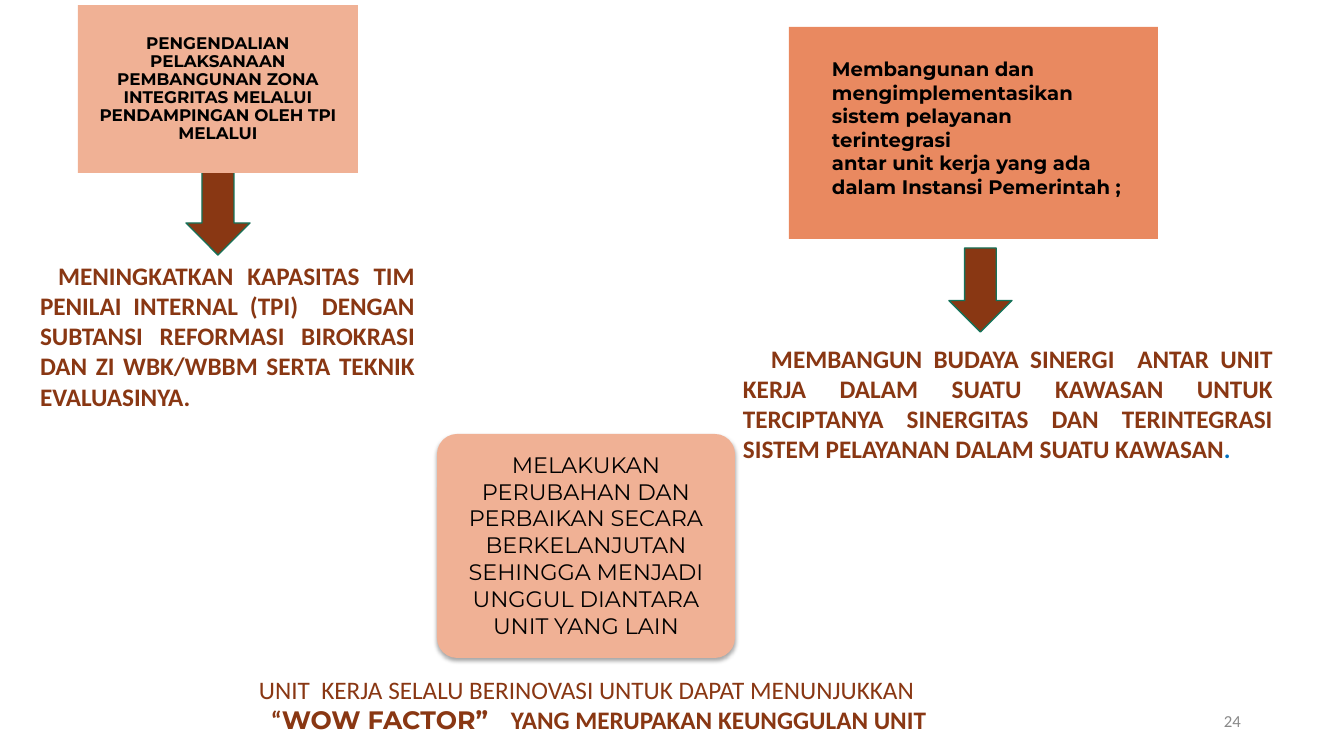
from dataclasses import dataclass

from lxml import etree
from pptx import Presentation
from pptx.dml.color import RGBColor
from pptx.enum.shapes import MSO_SHAPE as Shape
from pptx.enum.text import MSO_ANCHOR as Anchor, PP_ALIGN as Align
from pptx.oxml import parse_xml
from pptx.oxml.ns import nsdecls, qn
from pptx.util import Pt

EMU_PER_PX = 914400 / 100.8


@dataclass(frozen=True)
class Theme:
    peach: str = "F0B195"
    orange: str = "E98960"
    brown: str = "893713"
    green: str = "157259"
    blue: str = "0070C0"
    grey: str = "898989"
    black: str = "000000"
    body: str = "Calibri"
    display: str = "Montserrat"
    small: int = 12
    medium: int = 14
    large: int = 16
    action: int = 18


T = Theme()

# Content: boxes are (left, top, width, height) in px
ARROWS = [(186, 171, 64, 84), (949, 248, 63, 84)]

CONTROL_BOX = (78, 5, 280, 168)
CONTROL = ("PENGENDALIAN PELAKSANAAN PEMBANGUNAN ZONA INTEGRITAS MELALUI "
           "PENDAMPINGAN OLEH TPI MELALUI")

SERVICE_BOX = (789, 27, 369, 212)
SERVICE = [
    "Membangunan dan",
    "mengimplementasikan",
    "sistem pelayanan",
    "terintegrasi",
    "antar unit kerja yang ada",
    "dalam Instansi Pemerintah ;",
]

IMPROVE_BOX = (437, 434, 298, 224)
IMPROVE = ("MELAKUKAN PERUBAHAN DAN PERBAIKAN SECARA BERKELANJUTAN SEHINGGA "
           "MENJADI UNGGUL DIANTARA UNIT YANG LAIN")

# (box, first-line indent, [(text, colour)])
ACTIONS = [
    ((30, 255, 395, 164), 18, [
        ("MENINGKATKAN KAPASITAS TIM PENILAI INTERNAL (TPI)  DENGAN SUBTANSI "
         "REFORMASI BIROKRASI DAN ZI WBK/WBBM SERTA TEKNIK EVALUASINYA.", T.brown)]),
    ((733, 338, 550, 132), 28, [
        ("MEMBANGUN BUDAYA SINERGI  ANTAR UNIT KERJA DALAM SUATU KAWASAN UNTUK "
         "TERCIPTANYA SINERGITAS DAN TERINTEGRASI SISTEM PELAYANAN DALAM SUATU "
         "KAWASAN", T.brown),
        (".", T.blue)]),
]

CLOSING_BOX = (249, 669, 895, 72)
CLOSING = "UNIT  KERJA SELALU BERINOVASI UNTUK DAPAT MENUNJUKKAN"
WOW_INDENT, WOW_TAB = 12, 250
WOW = [("“", T.body), ("WOW FACTOR”", T.display),
       ("\tYANG MERUPAKAN KEUNGGULAN UNIT", T.body)]

NUMBER_BOX = (949, 701, 302, 40)
NUMBER = "24"


# Helpers
def px(n):
    return round(n * EMU_PER_PX)


def rgb(colour):
    return RGBColor.from_string(colour)


def add_box(s, kind, box, fill, line=None):
    sp = s.shapes.add_shape(kind, *map(px, box))
    sp.shadow.inherit = False
    sp.fill.solid()
    sp.fill.fore_color.rgb = rgb(fill)
    if line:
        sp.line.color.rgb = rgb(line)
        sp.line.width = Pt(1)
    else:
        sp.line.fill.background()
    return sp


def add_text(s, box):
    return s.shapes.add_textbox(*map(px, box)).text_frame


def set_frame(tf, anchor=Anchor.TOP, insets=(10, 5, 10, 5)):
    tf.word_wrap = True
    tf.vertical_anchor = anchor
    tf.margin_left, tf.margin_top, tf.margin_right, tf.margin_bottom = map(px, insets)
    return tf.paragraphs[0]


def add_run(p, text, size, font=T.body, colour=T.black, bold=False):
    r = p.add_run()
    r.text = text
    r.font.size = Pt(size)
    r.font.name = font
    r.font.bold = bold
    r.font.color.rgb = rgb(colour)
    return r


def set_indent(p, first_line):
    pPr = p._p.get_or_add_pPr()
    pPr.set("marL", "0")
    pPr.set("indent", str(px(first_line)))
    return pPr


prs = Presentation()
prs.slide_width, prs.slide_height = px(1344), px(756)
s = prs.slides.add_slide(prs.slide_layouts[6])

# Arrows
for box in ARROWS:
    add_box(s, Shape.DOWN_ARROW, box, T.brown, T.green)

# Control box
tf = add_box(s, Shape.RECTANGLE, CONTROL_BOX, T.peach).text_frame
p = set_frame(tf, Anchor.MIDDLE, (5, 5, 5, 5))
p.alignment = Align.CENTER
p.line_spacing = 0.9
add_run(p, CONTROL, T.small, T.display, bold=True)

# Service box
tf = add_box(s, Shape.RECTANGLE, SERVICE_BOX, T.orange).text_frame
p = set_frame(tf, insets=(43, 30, 5, 5))
for i, text in enumerate(SERVICE):
    p = p if i == 0 else tf.add_paragraph()
    p.alignment = Align.LEFT
    add_run(p, text, T.medium, T.display, bold=True)

# Actions under the arrows
for box, indent, runs in ACTIONS:
    p = set_frame(add_text(s, box))
    p.alignment = Align.JUSTIFY
    set_indent(p, indent)
    for text, colour in runs:
        add_run(p, text, T.action, colour=colour, bold=True)

# Improvement box with a soft shadow
sp = add_box(s, Shape.ROUNDED_RECTANGLE, IMPROVE_BOX, T.peach)
sp.adjustments[0] = 0.09
effects = sp._element.spPr.find(qn("a:effectLst"))
effects.append(parse_xml(
    f'<a:outerShdw {nsdecls("a")} blurRad="{Pt(3.1)}" dist="{Pt(1.8)}" dir="5400000" '
    f'rotWithShape="0"><a:srgbClr val="{T.black}"><a:alpha val="35000"/></a:srgbClr>'
    '</a:outerShdw>'))
p = set_frame(sp.text_frame, insets=(16, 11, 16, 5))
p.alignment = Align.CENTER
add_run(p, IMPROVE, T.large, T.display)

# Closing statement
tf = add_text(s, CLOSING_BOX)
p = set_frame(tf)
add_run(p, CLOSING, T.action, colour=T.brown)
p = tf.add_paragraph()
tabs = etree.SubElement(set_indent(p, WOW_INDENT), qn("a:tabLst"))
etree.SubElement(tabs, qn("a:tab"), pos=str(px(WOW_TAB)), algn="l")
for text, font in WOW:
    add_run(p, text, T.action, font, T.brown, bold=True)

# Slide number
p = set_frame(add_text(s, NUMBER_BOX), Anchor.MIDDLE)
p.alignment = Align.RIGHT
add_run(p, NUMBER, T.small, colour=T.grey)

prs.save("out.pptx")
